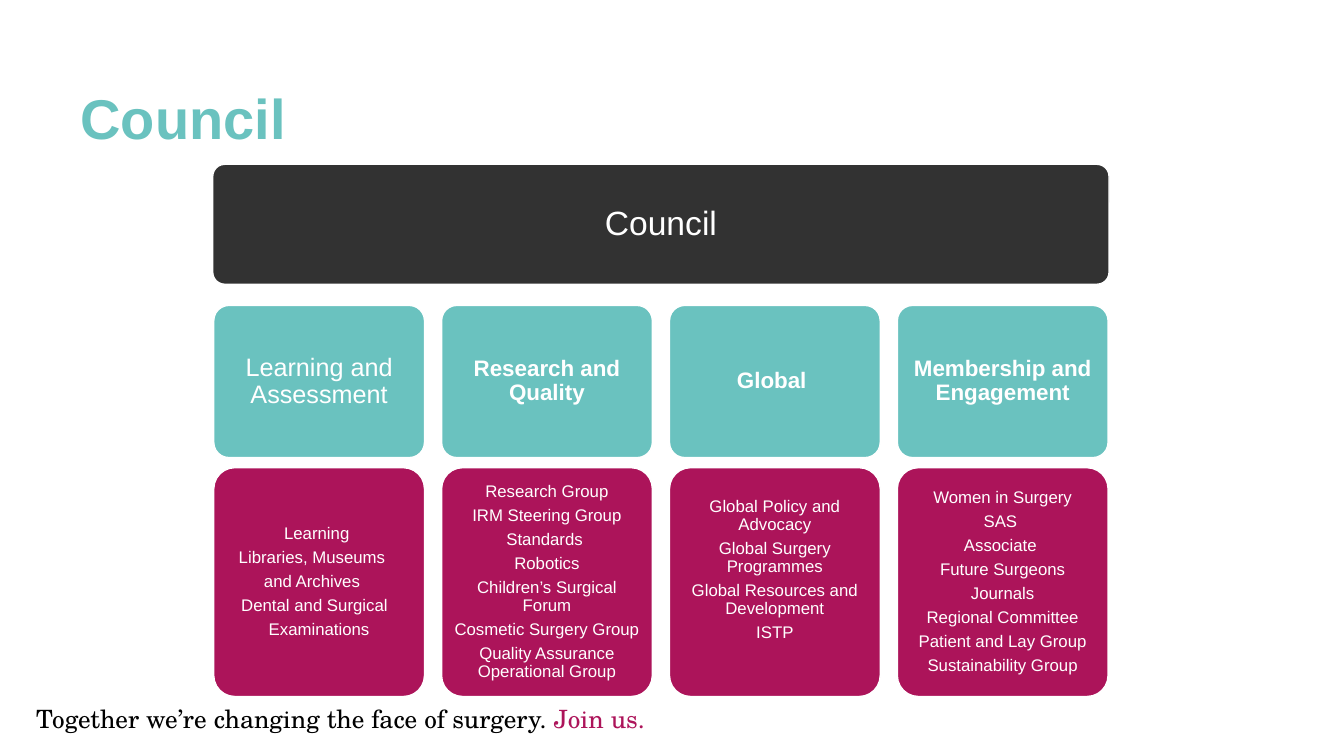
from pptx import Presentation
from pptx.dml.color import RGBColor
from pptx.enum.shapes import MSO_SHAPE as Shape
from pptx.enum.text import MSO_ANCHOR as Anchor, PP_ALIGN as Align
from pptx.util import Inches, Pt

COLOURS = {"dark": "323232", "teal": "6AC2BF", "plum": "AC145A",
           "join": "AD145A", "white": "FFFFFF", "black": "000000"}
LEFT, PITCH, CARD_WIDTH = 2.12, 2.26, 2.09

# Heading, its font format, the groups below it, and extra space under the groups
COLUMNS = [
    ("Learning and Assessment", {"size": 18},
     ["Learning ", "Libraries, Museums", "and Archives",
      "Dental and Surgical", "Examinations"], 0),
    ("Research and Quality", {"size": 16, "bold": True},
     ["Research Group", "IRM Steering Group", "Standards ", "Robotics",
      "Children’s Surgical Forum", "Cosmetic Surgery Group",
      "Quality Assurance Operational Group"], 0),
    ("Global ", {"size": 16, "bold": True},
     ["Global Policy and Advocacy", "Global Surgery Programmes",
      "Global Resources and Development", "ISTP"], 0.24),
    ("Membership and Engagement", {"size": 16, "bold": True},
     ["Women in Surgery", "SAS ", "Associate ", "Future Surgeons", "Journals",
      "Regional Committee", "Patient and Lay Group", "Sustainability Group"], 0),
]
# Side margins that push a centred line off the middle
MARGINS = {"Libraries, Museums": ("marR", 0.14),
           "Dental and Surgical": ("marR", 0.09),
           "Examinations": ("marL", 0.09)}


class SlideBuilder:
    def __init__(self, page, font="Arial"):
        self.page = page
        self.font = font

    def colour(self, name):
        return RGBColor.from_string(COLOURS[name])

    def span(self, para, text, size, colour="white", bold=False, font=None):
        span = para.add_run()
        span.text = text
        style = {"name": font or self.font, "size": Pt(size), "bold": bold}
        for key, value in style.items():
            setattr(span.font, key, value)
        span.font.color.rgb = self.colour(colour)

    def label(self, left, top, width, height, spans):
        """Add a one-line text box made of differently formatted spans."""
        box = self.page.shapes.add_textbox(*map(Inches, (left, top, width, height)))
        box.text_frame.word_wrap = True
        for text, style in spans:
            self.span(box.text_frame.paragraphs[0], text, **style)

    def card(self, left, top, width, height, fill, lines, style, inset, extra=0):
        """Add a rounded card with centred lines and extra space at the bottom."""
        card = self.page.shapes.add_shape(
            Shape.ROUNDED_RECTANGLE, *map(Inches, (left, top, width, height)))
        card.adjustments[0] = 0.1
        card.shadow.inherit = False
        card.fill.solid()
        card.fill.fore_color.rgb = self.colour(fill)
        card.line.color.rgb = self.colour("white")
        card.line.width = Pt(1)
        frame = card.text_frame
        layout = {"word_wrap": True, "vertical_anchor": Anchor.MIDDLE,
                  "margin_left": Inches(inset), "margin_right": Inches(inset),
                  "margin_top": Inches(inset), "margin_bottom": Inches(inset + extra)}
        for key, value in layout.items():
            setattr(frame, key, value)
        spacing = {"alignment": Align.CENTER, "line_spacing": 0.9,
                   "space_after": Pt(0.35 * style["size"])}
        for index, line in enumerate(lines):
            para = frame.add_paragraph() if index else frame.paragraphs[0]
            for key, value in spacing.items():
                setattr(para, key, value)
            if line in MARGINS:
                side, margin = MARGINS[line]
                para._p.get_or_add_pPr().set(side, str(Inches(margin)))
            self.span(para, line, **style)


def main():
    deck = Presentation()
    deck.slide_width, deck.slide_height = Inches(13.33), Inches(7.5)
    builder = SlideBuilder(deck.slides.add_slide(deck.slide_layouts[6]))

    slogan = {"size": 18, "font": "TeX Gyre Schola"}
    builder.label(0.26, 6.93, 6.67, 0.4, [
        ("Together we’re changing the face of surgery. ", {**slogan, "colour": "black"}),
        ("Join us.", {**slogan, "colour": "join"})])
    builder.label(0.7, 0.78, 9.84, 0.77,
                  [("Council", {"size": 40, "colour": "teal", "bold": True})])

    builder.card(2.11, 1.63, 8.89, 1.19, "dark", ["Council"], {"size": 24}, 0.1)
    for index, (heading, style, groups, extra) in enumerate(COLUMNS):
        left = LEFT + index * PITCH
        builder.card(left, 3.03, CARD_WIDTH, 1.51, "teal", [heading], style, 0.07)
        builder.card(left, 4.64, CARD_WIDTH, 2.27, "plum", groups,
                     {"size": 12}, 0.05, extra)

    deck.save("out.pptx")


if __name__ == "__main__":
    main()
